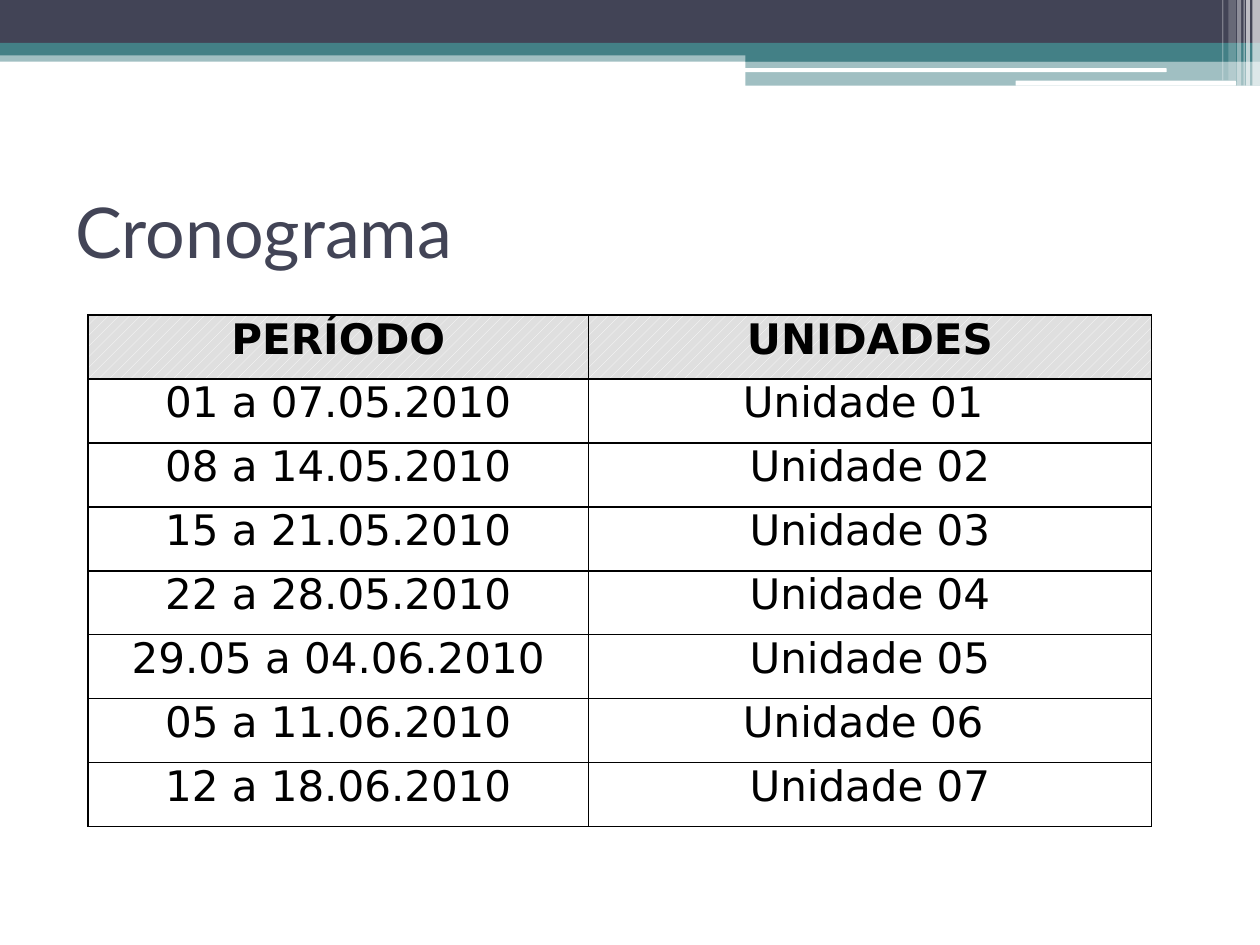
from lxml.etree import SubElement as Sub
from pptx import Presentation
from pptx.dml.color import RGBColor as RGB
from pptx.enum.dml import MSO_PATTERN as PAT
from pptx.enum.shapes import MSO_SHAPE as SHAPE
from pptx.enum.text import MSO_ANCHOR as ANCHOR, PP_ALIGN as ALIGN
from pptx.oxml import parse_xml
from pptx.oxml.ns import nsdecls, qn
from pptx.util import Pt

HUES = {"navy": "424456", "teal": "438086", "white": "FFFFFF",
        "black": "000000", "gray": "DFDFDF"}

# Left, top, width, height, colour, opacity in percent
BANDS = [
    (0, 28.8, 720, 6.5, "teal", 50),
    (0, 0, 720, 24.5, "navy", 100),
    (0, 24.5, 720, 7.2, "teal", 100),
    (426, 28.1, 294, 7.2, "teal", 100),
    (426, 34.6, 294, 14.4, "teal", 50),
]
LINES = [(425.5, 39, 241.2, 2.2), (580.3, 46.1, 126, 2.9)]
# Left, width, height, opacity in percent
STRIPES = [
    (715.7, 4.3, 49, 65), (712.1, 2.2, 49, 65), (710.6, 0.7, 49, 60),
    (707, 2.2, 49, 40), (702, 4.3, 46, 20), (698.4, 0.7, 46, 30),
]
ROWS = [
    ("PERÍODO", "UNIDADES"),
    ("01 a 07.05.2010", "Unidade 01 "),
    ("08 a 14.05.2010", "Unidade 02"),
    ("15 a 21.05.2010", "Unidade 03"),
    ("22 a 28.05.2010", "Unidade 04"),
    ("29.05 a 04.06.2010", "Unidade 05"),
    ("05 a 11.06.2010", "Unidade 06 "),
    ("12 a 18.06.2010", "Unidade 07"),
]


def hue(name):
    return RGB.from_string(HUES[name])


def add_run(para, text, font, size, color, bold=False):
    run = para.add_run()
    run.text = text
    run.font.name = font
    run.font.size = Pt(size)
    run.font.bold = bold
    run.font.color.rgb = hue(color)


def add_bar(slide, box, color, alpha=100, kind=SHAPE.RECTANGLE):
    bar = slide.shapes.add_shape(kind, *map(Pt, box))
    bar.shadow.inherit = False
    bar.fill.solid()
    bar.fill.fore_color.rgb = hue(color)
    bar.line.fill.background()
    if alpha < 100:
        tint = bar._element.spPr.find(".//" + qn("a:srgbClr"))
        Sub(tint, qn("a:alpha")).set("val", str(alpha * 1000))
    return bar


def add_header(slide, left, top):
    # Colour bands
    for x, y, wide, high, color, alpha in BANDS:
        add_bar(slide, (left + x, top + y, wide, high), color, alpha)
    # White rounded lines
    for x, y, wide, high in LINES:
        bar = add_bar(slide, (left + x, top + y, wide, high), "white",
                      kind=SHAPE.ROUNDED_RECTANGLE)
        bar.adjustments[0] = 0.17
    # Upright stripes at the right edge
    for x, wide, high, alpha in STRIPES:
        add_bar(slide, (left + x, top, wide, high), "white", alpha)


def add_title(slide, box, text):
    frame = slide.shapes.add_textbox(*map(Pt, box)).text_frame
    frame.word_wrap = True
    frame.vertical_anchor = ANCHOR.MIDDLE
    add_run(frame.paragraphs[0], text, "Lato", 40, "navy")


def add_edges(cell):
    # Borders come before the fill in the cell properties
    props = cell._tc.get_or_add_tcPr()
    for spot, side in enumerate("LRTB"):
        props.insert(spot, parse_xml(
            f'<a:ln{side} {nsdecls("a")} w="{Pt(1)}"><a:solidFill>'
            f'<a:srgbClr val="{HUES["black"]}"/></a:solidFill></a:ln{side}>'))


def fill_cell(cell, text, head):
    cell.margin_left = cell.margin_right = Pt(5)
    cell.margin_top = cell.margin_bottom = 0
    if head:
        cell.fill.patterned()
        cell.fill.pattern = PAT.PERCENT_20
        cell.fill.fore_color.rgb = hue("white")
        cell.fill.back_color.rgb = hue("gray")
    else:
        cell.fill.background()
    add_edges(cell)
    para = cell.text_frame.paragraphs[0]
    para.alignment = ALIGN.CENTER
    para.space_before = Pt(6)
    add_run(para, text, "DejaVu Sans", 24, "black", head)


def add_plan(slide, box, first):
    wide, high = box[2:]
    table = slide.shapes.add_table(len(ROWS), 2, *map(Pt, box)).table
    table.first_row = table.horz_banding = False
    table.columns[0].width = Pt(first)
    table.columns[1].width = Pt(wide - first)
    for r, texts in enumerate(ROWS):
        table.rows[r].height = Pt(high / len(ROWS))
        for c, text in enumerate(texts):
            fill_cell(table.cell(r, c), text, r == 0)


def main():
    deck = Presentation()
    deck.slide_width, deck.slide_height = Pt(720), Pt(540)
    slide = deck.slides.add_slide(deck.slide_layouts[6])
    add_header(slide, 0, 0)
    add_title(slide, (36, 90, 648, 84), "Cronograma")
    add_plan(slide, (50.4, 180, 607.7, 292.4), 285.8)
    deck.save("out.pptx")


if __name__ == "__main__":
    main()
